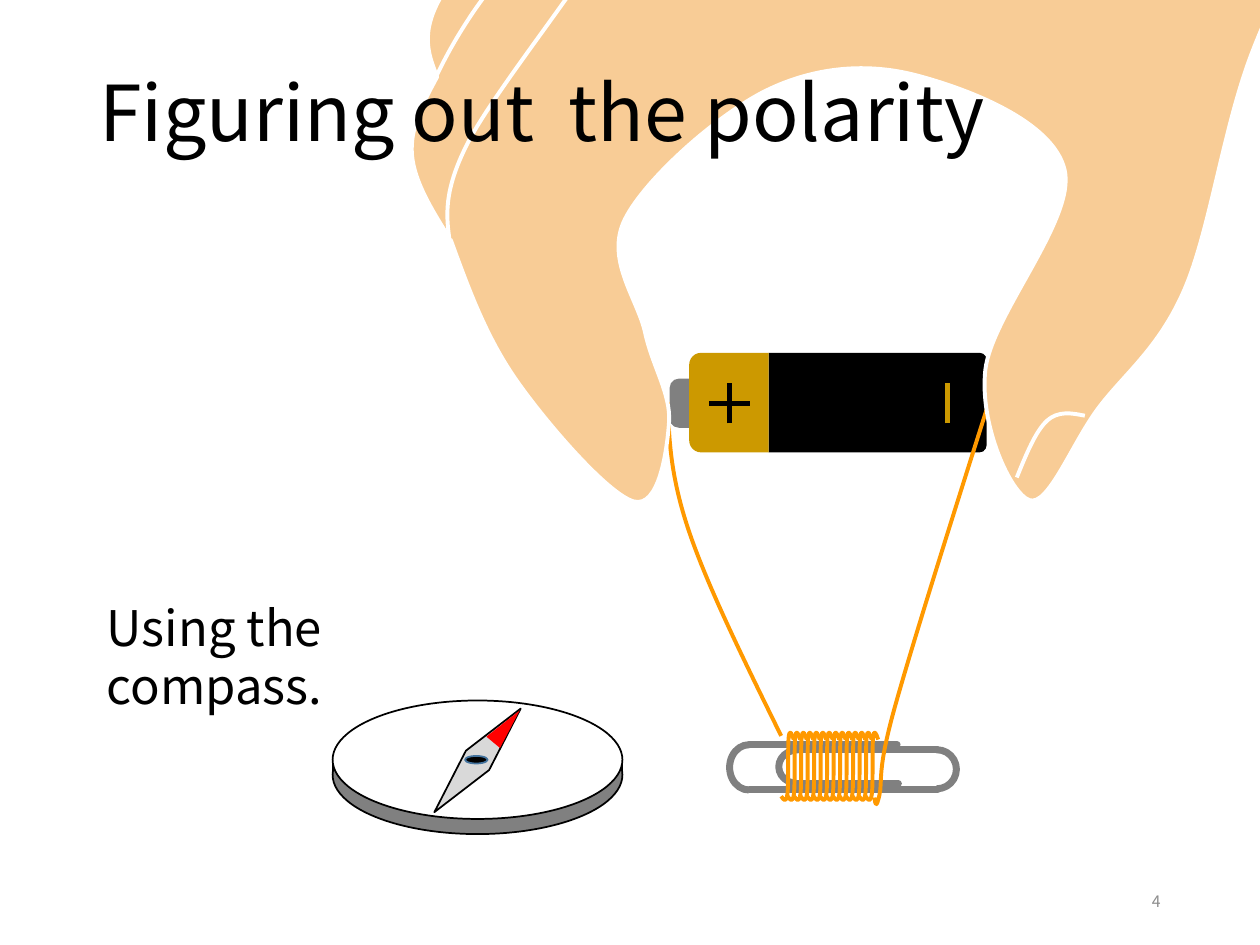
"""Build the slide on finding the polarity of a battery-powered coil with a compass."""
from pptx import Presentation, util as u
from pptx.dml.color import RGBColor
from pptx.enum import shapes, text
from pptx.oxml.ns import qn
from pptx.oxml.xmlchemy import OxmlElement

FONT = "Noto Sans CJK KR"
BLACK = RGBColor(0x00, 0x00, 0x00)
WHITE = RGBColor(0xFF, 0xFF, 0xFF)
GRAY = RGBColor(0x80, 0x80, 0x80)
SILVER = RGBColor(0xD9, 0xD9, 0xD9)
PAGE_GRAY = RGBColor(0x8C, 0x8C, 0x8C)
GOLD = RGBColor(0xCC, 0x99, 0x00)
COPPER = RGBColor(0xFF, 0x99, 0x00)
SKIN = RGBColor(0xF8, 0xCC, 0x96)
RED = RGBColor(0xFF, 0x00, 0x00)
PIVOT_BLUE = RGBColor(0x43, 0x73, 0x9E)
KIND = shapes.MSO_SHAPE

BATTERY = {
    "cap": ((5.2, 3.12, 0.39, 0.16), 270, 0.46, GRAY),
    "body": ((6.57, 2.33, 0.79, 1.73), 90, 0.07, BLACK),
    "collar": ((5.39, 2.88, 0.79, 0.63), 270, 0.15, GOLD),
}
POLE_Y, SIGN_ARM = 3.2, 0.16
PLUS_X, MINUS_X = 5.79, 7.52

LEFT_BEND, RIGHT_BEND = (162, 55.65), (52.42, 163.18)
CLIP_BENDS = {
    "inner left": ((6.18, 5.95, 0.31, 0.27), LEFT_BEND),
    "right": ((7.28, 5.95, 0.31, 0.31), RIGHT_BEND),
    "outer left": ((5.79, 5.91, 0.31, 0.36), LEFT_BEND),
}
CLIP_WIRES = [(6.34, 7.44, 5.95), (5.95, 7.44, 6.27), (6.34, 7.13, 6.22), (5.95, 7.12, 5.91)]

LEADS = {
    "plus": [(5.3, 3.19), (5.47, 4.22), (6.2, 5.84)],
    "minus": [(6.94, 6.33), (6.98, 6.31), (7.1, 5.62), (7.84, 3.22)],
}
COIL_TURN = [(0, 0), (0.05, -0.02), (0.06, -0.47), (0.1, -0.45)]
COIL_LEFT, COIL_RIGHT, COIL_BOTTOM, TURNS = 6.2, 6.87, 6.32, 14

HAND = {
    "wrist": [(10.79, -1.28), (9.94, 0.41), (9.4, 2.3), (8.71, 3.25)],
    "thumb": [(8.17, 3.97), (7.82, 2.94), (8.45, 1.35)],
    "arch": [(7.28, 0.6), (6.08, 0.72), (4.96, 1.74)],
    "fingertip": [(5.12, 2.64), (5.31, 3.35), (5.03, 3.98)],
    "back of finger": [(4.1, 3.02), (3.58, 1.91)],
}
MIDDLE_FINGER = [(3.58, 1.91), (3.27, 1.23), (3.47, 0.61)]
RING_FINGER = [(3.47, 0.61), (3.46, 0.05), (4.16, -0.86)]
CREASES = {
    "index": [(3.57, 1.92), (3.71, 1.14), (4.74, -0.38), (4.88, -0.89)],
    "middle": [(3.46, 0.61), (3.74, 0.12), (4.31, -0.67), (4.46, -1.11)],
    "thumbnail": [(8.07, 3.79), (8.31, 3.34), (8.61, 3.3)],
}

DIAL_LEFT, DIAL_WIDTH, DIAL_HEIGHT = 2.64, 2.3, 0.94
DIAL_TOP, RIM = 5.56, 0.12
NEEDLE_ANGLE = 39.8
COMPASS = {
    "base": (KIND.OVAL, (DIAL_LEFT, DIAL_TOP + RIM, DIAL_WIDTH, DIAL_HEIGHT), 0, GRAY, BLACK),
    "dial": (KIND.OVAL, (DIAL_LEFT, DIAL_TOP, DIAL_WIDTH, DIAL_HEIGHT), 0, WHITE, BLACK),
    "needle": (KIND.DIAMOND, (3.67, 5.5, 0.24, 1.07), NEEDLE_ANGLE, SILVER, BLACK),
    "north tip": (KIND.ISOSCELES_TRIANGLE, (3.95, 5.6, 0.14, 0.33), NEEDLE_ANGLE, RED, None),
    "pivot": (KIND.OVAL, (3.69, 6, 0.18, 0.06), 0, BLACK, PIVOT_BLUE),
}


def paint(part, fill, line, width):
    part.shadow.inherit = False
    if fill is None:
        part.fill.background()
    else:
        part.fill.solid()
        part.fill.fore_color.rgb = fill
    if line is None:
        part.line.fill.background()
    else:
        part.line.color.rgb = line
        part.line.width = u.Pt(width)


def add_part(slide, kind, box, rotation=0, fill=None, line=None, width=1, adjust=()):
    part = slide.shapes.add_shape(kind, *map(u.Inches, box))
    part.rotation = rotation
    for index, value in enumerate(adjust):
        part.adjustments[index] = value
    paint(part, fill, line, width)


def add_line(slide, ends, color, width, cap="flat"):
    connector = slide.shapes.add_connector(shapes.MSO_CONNECTOR.STRAIGHT, *map(u.Inches, ends))
    connector.line.color.rgb = color
    connector.line.width = u.Pt(width)
    connector._element.spPr.find(qn("a:ln")).set("cap", cap)
    connector._element.spPr.append(OxmlElement("a:effectLst"))


def midpoint(a, b):
    return (a[0] + b[0]) / 2, (a[1] + b[1]) / 2


def smooth(knots):
    """Return Bezier triples through the knots; each handle is a sixth of its neighbours' span."""
    handles = [((after[0] - before[0]) / 6, (after[1] - before[1]) / 6)
               for before, after in zip(knots, knots[2:])]
    triples = []
    for index, (start, end) in enumerate(zip(knots, knots[1:])):
        leaving = arriving = None
        if index > 0:
            dx, dy = handles[index - 1]
            leaving = start[0] + dx, start[1] + dy
        if index < len(handles):
            dx, dy = handles[index]
            arriving = end[0] - dx, end[1] - dy
        leaving = leaving or midpoint(start, arriving or end)
        arriving = arriving or midpoint(leaving, end)
        triples += [leaving, arriving, end]
    return triples


def add_curve(slide, sections, fill, line):
    """Draw smooth sections end to end, with a corner wherever two of them meet."""
    points = sections[0][:1] + [point for knots in sections for point in smooth(knots)]
    start, *controls = [(u.Inches(x), u.Inches(y)) for x, y in points]
    builder = slide.shapes.build_freeform(*start)
    builder.add_line_segments(controls, close=False)
    curve = builder.convert_to_shape()
    steps = list(curve._element.iter(qn("a:lnTo")))
    for first in range(0, len(steps), 3):
        bezier = OxmlElement("a:cubicBezTo")
        steps[first].addprevious(bezier)
        for step in steps[first:first + 3]:
            bezier.append(step[0])
            step.getparent().remove(step)
    paint(curve, fill, line, 2.25)


def add_text(slide, box, words, size, color, anchor=text.MSO_ANCHOR.MIDDLE,
             align=text.PP_ALIGN.LEFT, spacing=1.0, right_inset=0.1):
    frame = slide.shapes.add_textbox(*map(u.Inches, box)).text_frame
    frame.word_wrap = True
    frame.vertical_anchor = anchor
    frame.margin_right = u.Inches(right_inset)
    paragraph = frame.paragraphs[0]
    paragraph.text = words
    paragraph.alignment = align
    paragraph.line_spacing = spacing
    paragraph.font.name = FONT
    paragraph.font.size = u.Pt(size)
    paragraph.font.color.rgb = color


def draw_battery(slide):
    for box, rotation, rounding, color in BATTERY.values():
        add_part(slide, KIND.ROUND_2_SAME_RECTANGLE, box, rotation, color, adjust=(rounding, 0))
    for x, color in ((MINUS_X, GOLD), (PLUS_X, BLACK)):
        add_line(slide, (x, POLE_Y + SIGN_ARM, x, POLE_Y - SIGN_ARM), color, 3)
    add_line(slide, (PLUS_X - SIGN_ARM, POLE_Y, PLUS_X + SIGN_ARM, POLE_Y), BLACK, 3)


def draw_electromagnet(slide):
    for box, angles in CLIP_BENDS.values():
        add_part(slide, KIND.ARC, box, 180, line=GRAY, width=4, adjust=angles)
    for left, right, y in CLIP_WIRES:
        add_line(slide, (left, y, right, y), GRAY, 4, cap="rnd")
    for lead in LEADS.values():
        add_curve(slide, [lead], None, COPPER)
    pitch = (COIL_RIGHT - COIL_LEFT) / (TURNS - 1)
    for turn in range(TURNS):
        left = COIL_LEFT + turn * pitch
        add_curve(slide, [[(left + x, COIL_BOTTOM + y) for x, y in COIL_TURN]], None, COPPER)


def draw_hand(slide):
    index_and_thumb = sum(HAND.values(), [])
    add_curve(slide, [index_and_thumb, MIDDLE_FINGER, RING_FINGER], SKIN, WHITE)
    for crease in CREASES.values():
        add_curve(slide, [crease], SKIN, WHITE)


def draw_compass(slide):
    for kind, box, rotation, fill, line in COMPASS.values():
        add_part(slide, kind, box, rotation, fill, line)
    middle = DIAL_TOP + DIAL_HEIGHT / 2
    for edge in (DIAL_LEFT + DIAL_WIDTH, DIAL_LEFT):
        add_line(slide, (edge, middle + RIM, edge, middle), BLACK, 1)


def main():
    deck = Presentation()
    deck.slide_width, deck.slide_height = u.Inches(10), u.Inches(7.5)
    slide = deck.slides.add_slide(deck.slide_layouts[6])
    add_text(slide, (7.06, 6.95, 2.25, 0.4), "4", 9, PAGE_GRAY, align=text.PP_ALIGN.RIGHT)
    for draw in (draw_battery, draw_electromagnet, draw_hand):
        draw(slide)
    add_text(slide, (0.69, 0, 8.62, 1.85), "Figuring out  the polarity", 44, BLACK, spacing=0.9)
    draw_compass(slide)
    add_text(slide, (0.75, 4.69, 3.69, 0.57), "Using the compass.", 28, BLACK,
             anchor=text.MSO_ANCHOR.TOP, right_inset=1.6)
    deck.save("out.pptx")


if __name__ == "__main__":
    main()
